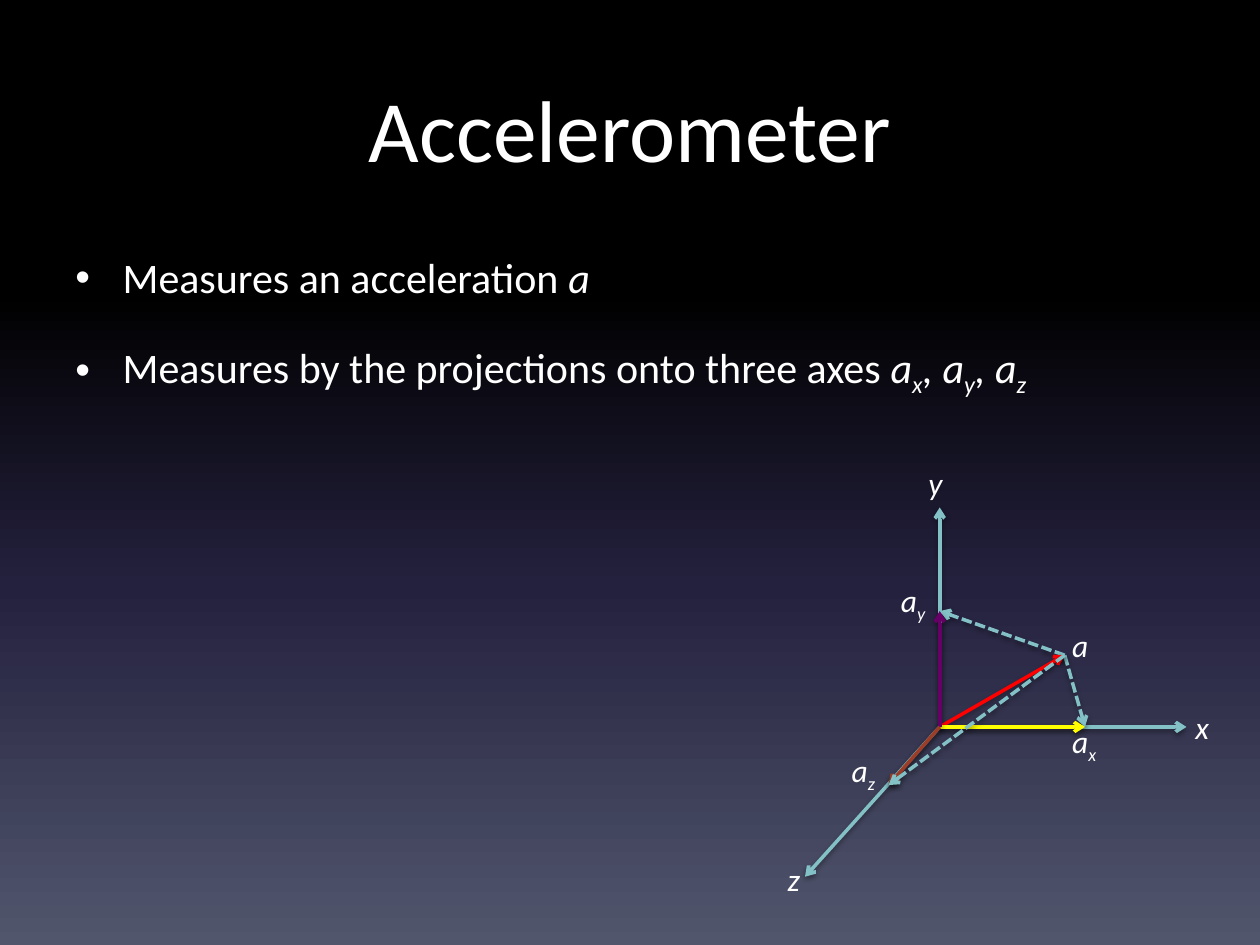
from lxml import etree
from pptx import Presentation
from pptx.dml.color import RGBColor
from pptx.enum import dml, shapes, text
from pptx.oxml.ns import qn
from pptx.util import Pt

HUES = {"white": "FFFFFF", "black": "000000", "navy": "24213E", "slate": "51566D",
        "teal": "83C1C6", "red": "FF0000", "yellow": "FFFF00", "purple": "660066",
        "brown": "9C3D28"}


def add_node(root, tag, **attrs):
    """Append a DrawingML element and return it."""
    return etree.SubElement(root, qn("a:" + tag), {k: str(v) for k, v in attrs.items()})


def paint_back(slide):
    """Fill the background with a four-stop vertical gradient."""
    fill = slide.background.fill
    fill.gradient()
    fill.gradient_angle = 270
    stops = slide.element.find(".//" + qn("a:gsLst"))
    for stop in list(stops):
        stops.remove(stop)
    for spot, hue in ((0, "black"), (31, "black"), (62, "navy"), (100, "slate")):
        add_node(add_node(stops, "gs", pos=spot * 1000), "srgbClr", val=HUES[hue])


def add_box(slide, box, wrap=True):
    """Add an empty text box and return its frame."""
    frame = slide.shapes.add_textbox(*map(Pt, box)).text_frame
    frame.word_wrap = wrap
    return frame


def add_run(para, words, size, style=""):
    """Add a run; style holds i for italic and s for subscript."""
    run = para.add_run()
    run.text = words
    font = run.font
    font.name, font.size, font.italic = "Calibri", Pt(size), "i" in style
    font.color.rgb = RGBColor.from_string(HUES["white"])
    if "s" in style:
        run._r.get_or_add_rPr().set("baseline", "-25000")


def add_title(slide, box):
    """Write the centred title."""
    frame = add_box(slide, box)
    frame.vertical_anchor = text.MSO_ANCHOR.MIDDLE
    para = frame.paragraphs[0]
    para.alignment = text.PP_ALIGN.CENTER
    add_run(para, "Accelerometer", 50)


def add_list(slide, box):
    """Write the two bullet points."""
    points = (
        (("Measures an acceleration ", ""), ("a", "i")),
        (("Measures by the projections onto three axes ", ""), ("a", "i"), ("x", "is"),
         (", a", "i"), ("y", "is"), (", a", "i"), ("z", "is")),
    )
    frame = add_box(slide, box)
    for i, runs in enumerate(points):
        para = frame.add_paragraph() if i else frame.paragraphs[0]
        para.line_spacing = 1.5
        para.space_before = Pt(5.8)
        props = para._p.get_or_add_pPr()
        props.set("marL", str(Pt(27)))
        props.set("indent", str(-Pt(27)))
        add_node(props, "buFont", typeface="Arial")
        add_node(props, "buChar", char="•")
        for words, style in runs:
            add_run(para, words, 24, style)


def add_arrow(slide, start, end, hue, dash=False):
    """Draw a shadowed arrow between two points."""
    line = slide.shapes.add_connector(shapes.MSO_CONNECTOR.STRAIGHT, *map(Pt, start + end))
    line.line.width = Pt(2)
    line.line.color.rgb = RGBColor.from_string(HUES[hue])
    if dash:
        line.line.dash_style = dml.MSO_LINE.SQUARE_DOT
        line.line._ln.find(qn("a:prstDash")).set("val", "sysDash")
    add_node(line.line._ln, "tailEnd", type="arrow")
    cast = add_node(add_node(line._element.spPr, "effectLst"), "outerShdw",
                    blurRad=Pt(3.1), dist=Pt(1.6), dir=5400000, rotWithShape=0)
    add_node(add_node(cast, "srgbClr", val=HUES["black"]), "alpha", val=38000)


def add_axes(slide, box):
    """Draw the axes, the vector, its projections and the labels."""
    left, top = box[:2]

    def at(x, y):
        """Shift a point into the box."""
        return left + x, top + y

    zero, tip = at(94, 154.4), at(165.4, 113.4)
    foot = {"x": at(177, 154.4), "y": at(94, 88.2), "z": at(64.8, 187.6)}
    ends = {"z": at(17, 240), "x": at(235, 154.4), "y": at(94, 29)}
    for end in ends.values():
        add_arrow(slide, zero, end, "teal")
    for axis in "xy":
        add_arrow(slide, tip, foot[axis], "teal", True)
    add_arrow(slide, zero, tip, "red")
    for axis, hue in (("x", "yellow"), ("y", "purple"), ("z", "brown")):
        add_arrow(slide, zero, foot[axis], hue)
    add_arrow(slide, tip, foot["z"], "teal", True)

    labels = (("x", "", 233, 140), ("y", "", 80.4, 0.4), ("z", "", 0, 227),
              ("a", "", 162.6, 93.2), ("a", "x", 162.6, 148), ("a", "y", 64.8, 67.4),
              ("a", "z", 36.6, 164.6))
    for word, sub, x, y in labels:
        frame = add_box(slide, (*at(x, y), 33 if sub else 28, 29), False)
        add_run(frame.paragraphs[0], word, 18, "i")
        if sub:
            add_run(frame.paragraphs[0], sub, 18, "is")


def main():
    """Build and save the slide."""
    deck = Presentation()
    deck.slide_width, deck.slide_height = Pt(720), Pt(540)
    slide = deck.slides.add_slide(deck.slide_layouts[6])
    paint_back(slide)
    add_title(slide, (36, 28, 648, 90))
    add_list(slide, (36, 126, 648, 391))
    add_axes(slide, (443, 261, 261, 256))
    deck.save("out.pptx")


if __name__ == "__main__":
    main()
